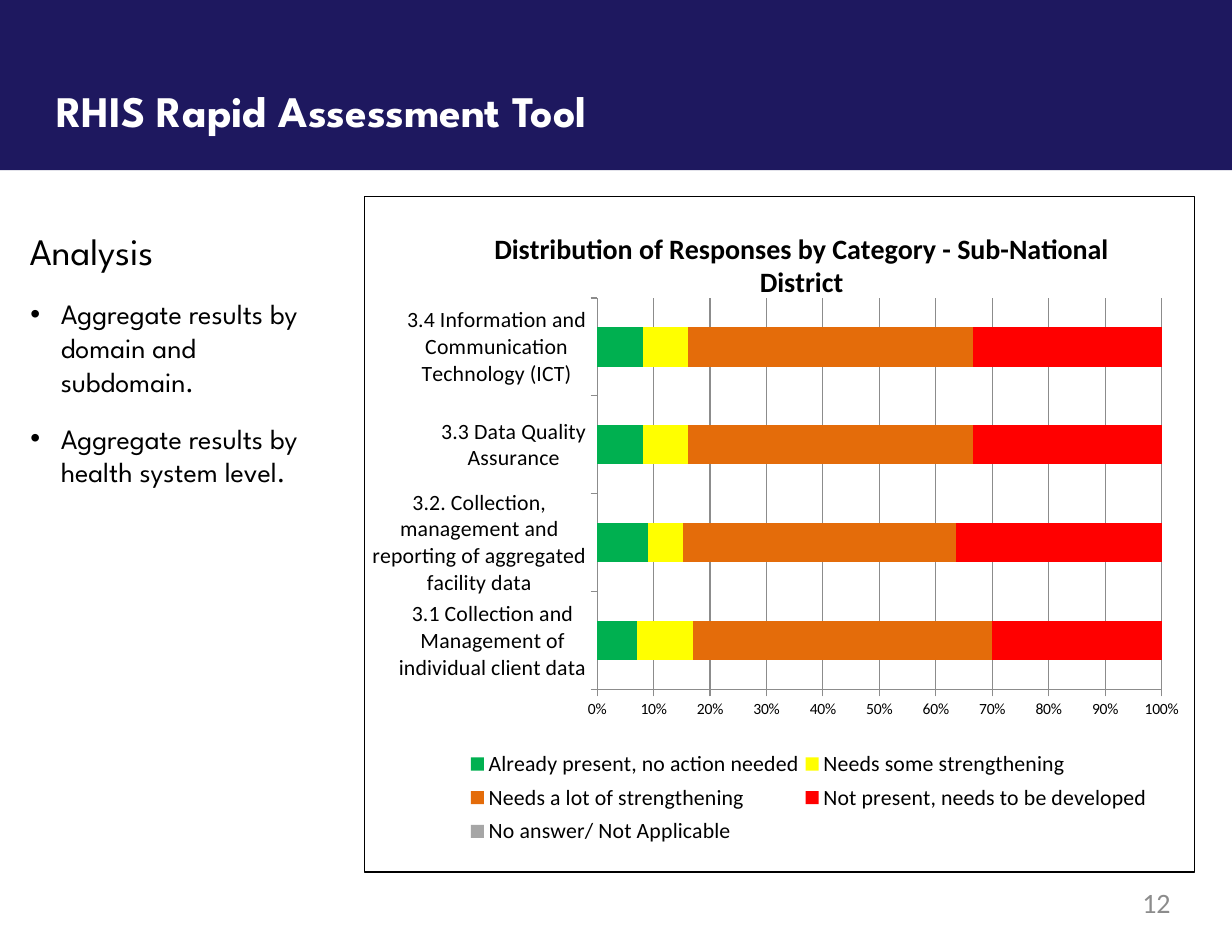
from pptx import Presentation
from pptx.chart.data import CategoryChartData
from pptx.dml.color import RGBColor
from pptx.enum.chart import XL_CHART_TYPE, XL_LEGEND_POSITION, XL_TICK_MARK
from pptx.enum.shapes import MSO_SHAPE
from pptx.enum.text import MSO_ANCHOR, MSO_AUTO_SIZE, PP_ALIGN
from pptx.oxml import parse_xml
from pptx.oxml.ns import nsdecls, qn
from pptx.util import Cm, Pt

NAVY = RGBColor(0x1E, 0x18, 0x5F)
WHITE = RGBColor(0xFF, 0xFF, 0xFF)
BLACK = RGBColor(0, 0, 0)
GRAY = RGBColor(0x8C, 0x8C, 0x8C)
GREEN = RGBColor(0x00, 0xB0, 0x50)
YELLOW = RGBColor(0xFF, 0xFF, 0x00)
ORANGE = RGBColor(0xE4, 0x6C, 0x0A)
RED = RGBColor(0xFF, 0x00, 0x00)
SILVER = RGBColor(0xA6, 0xA6, 0xA6)
HEAD, SANS = "League Spartan", "Calibri"

TITLE = "RHIS Rapid Assessment Tool"
LEAD = "Analysis"
POINTS = [
    "Aggregate results by domain and subdomain.",
    "Aggregate results by health system level.",
]
NUMBER = "12"
CAPTION = "Distribution of Responses by Category - Sub-National District"
GROUPS = [
    "3.1 Collection and Management of individual client data",
    "3.2. Collection, management and reporting of aggregated facility data",
    "3.3 Data Quality Assurance",
    "3.4 Information and Communication Technology (ICT)",
]
SERIES = [
    ("Already present, no action needed", (7, 9, 8, 8), GREEN),
    ("Needs some strengthening", (10, 6, 8, 8), YELLOW),
    ("Needs a lot of strengthening", (53, 48, 50, 50), ORANGE),
    ("Not present, needs to be developed", (30, 36, 33, 33), RED),
    ("No answer/ Not Applicable", (0, 0, 0, 0), SILVER),
]


def box(*sides):
    return [Cm(side) for side in sides]


def move(shape, *sides):
    shape.left, shape.top, shape.width, shape.height = box(*sides)


def style(font, size, color, name, bold=False):
    font.size, font.name, font.bold = Pt(size), name, bold
    font.color.rgb = color


def reset(frame):
    frame.margin_left = frame.margin_right = 0
    frame.margin_top = frame.margin_bottom = 0
    frame.word_wrap = True
    frame.auto_size = MSO_AUTO_SIZE.NONE
    frame.vertical_anchor = MSO_ANCHOR.TOP


def place(node, index, inner=False, **parts):
    for old in node.findall(qn("c:layout")):
        node.remove(old)
    target = '<c:layoutTarget val="inner"/>' if inner else ""
    modes = "".join(f'<c:{k}Mode val="edge"/>' for k in parts if k in "xy")
    sizes = "".join(f'<c:{k} val="{v}"/>' for k, v in parts.items())
    node.insert(index, parse_xml(
        f'<c:layout {nsdecls("c")}><c:manualLayout>{target}{modes}{sizes}'
        '</c:manualLayout></c:layout>'))


def add_list(body):
    move(body, 0.64, 5.18, 6.78, 6.71)
    frame = body.text_frame
    reset(frame)
    frame.text = "\n".join([LEAD, *POINTS])
    for i, para in enumerate(frame.paragraphs):
        para.space_before = Pt(15.2 if i else 0)
        style(para.runs[0].font, 18 if i else 24, BLACK, HEAD)
        props = para._p.get_or_add_pPr()
        props.set("marL", str(Cm(0.74 if i else 0.03)))
        props.set("indent", str(Cm(-0.69 if i else 0)))
        mark = '<a:buChar {} char="•"/>' if i else "<a:buNone {}/>"
        props.append(parse_xml(mark.format(nsdecls("a"))))


def add_bars(slide):
    data = CategoryChartData()
    data.categories = GROUPS
    for name, values, _ in SERIES:
        data.add_series(name, values)
    chart = slide.shapes.add_chart(
        XL_CHART_TYPE.BAR_STACKED_100, *box(8.26, 4.45, 18.85, 15.34), data).chart
    style(chart.font, 10, BLACK, SANS)

    plot = chart.plots[0]
    plot.gap_width, plot.overlap = 150, 100
    plot.vary_by_categories = False
    for series, (_, _, color) in zip(plot.series, SERIES):
        series.format.fill.solid()
        series.format.fill.fore_color.rgb = color

    cats, scale = chart.category_axis, chart.value_axis
    style(cats.tick_labels.font, 14, BLACK, SANS)
    style(scale.tick_labels.font, 10, BLACK, SANS)
    scale.tick_labels.number_format = "0%"
    scale.tick_labels.number_format_is_linked = False
    scale.major_unit = 0.1
    scale.has_major_gridlines = True
    for axis in (cats, scale):
        axis.major_tick_mark = XL_TICK_MARK.OUTSIDE
    for item in (cats, scale, scale.major_gridlines):
        item.format.line.color.rgb = GRAY
        item.format.line.width = Pt(0.75)

    chart.has_title = True
    frame = chart.chart_title.text_frame
    frame.text = CAPTION
    style(frame.paragraphs[0].runs[0].font, 18, BLACK, SANS, True)
    chart.has_legend = True
    chart.legend.position = XL_LEGEND_POSITION.BOTTOM
    chart.legend.include_in_layout = False
    style(chart.legend.font, 14, BLACK, SANS)

    root = chart.element
    place(root.xpath("c:chart/c:plotArea")[0], 0, True,
          x=0.28, y=0.15, w=0.68, h=0.58)
    place(root.xpath("c:chart/c:title")[0], 1, x=0.15, y=0.04)
    place(root.xpath("c:chart/c:legend")[0], 1, x=0.12, y=0.81, w=0.83, h=0.16)
    root.find(qn("c:txPr")).addprevious(parse_xml(
        f'<c:spPr {nsdecls("c", "a")}><a:noFill/><a:ln w="{Pt(0.75)}"><a:solidFill>'
        f'<a:srgbClr val="{BLACK}"/></a:solidFill></a:ln></c:spPr>'))


def main():
    deck = Presentation()
    deck.slide_width, deck.slide_height = box(27.94, 21.59)
    slide = deck.slides.add_slide(deck.slide_layouts[1])
    title, body = slide.placeholders

    banner = slide.shapes.add_shape(MSO_SHAPE.RECTANGLE, *box(0, 0, 27.94, 3.86))
    banner.shadow.inherit = False
    banner.fill.solid()
    banner.fill.fore_color.rgb = NAVY
    banner.line.fill.background()
    title.element.addprevious(banner.element)

    move(title, 1.27, 1.91, 22, 1.19)
    reset(title.text_frame)
    title.text_frame.text = TITLE
    para = title.text_frame.paragraphs[0]
    para.alignment = PP_ALIGN.LEFT
    style(para.runs[0].font, 28, WHITE, HEAD, True)

    add_list(body)
    add_bars(slide)

    page = slide.shapes.add_textbox(*box(20.12, 20.09, 6.43, 1.07)).text_frame
    reset(page)
    page.text = NUMBER
    page.paragraphs[0].alignment = PP_ALIGN.RIGHT
    style(page.paragraphs[0].runs[0].font, 18, GRAY, SANS)
    deck.save("out.pptx")


if __name__ == "__main__":
    main()
